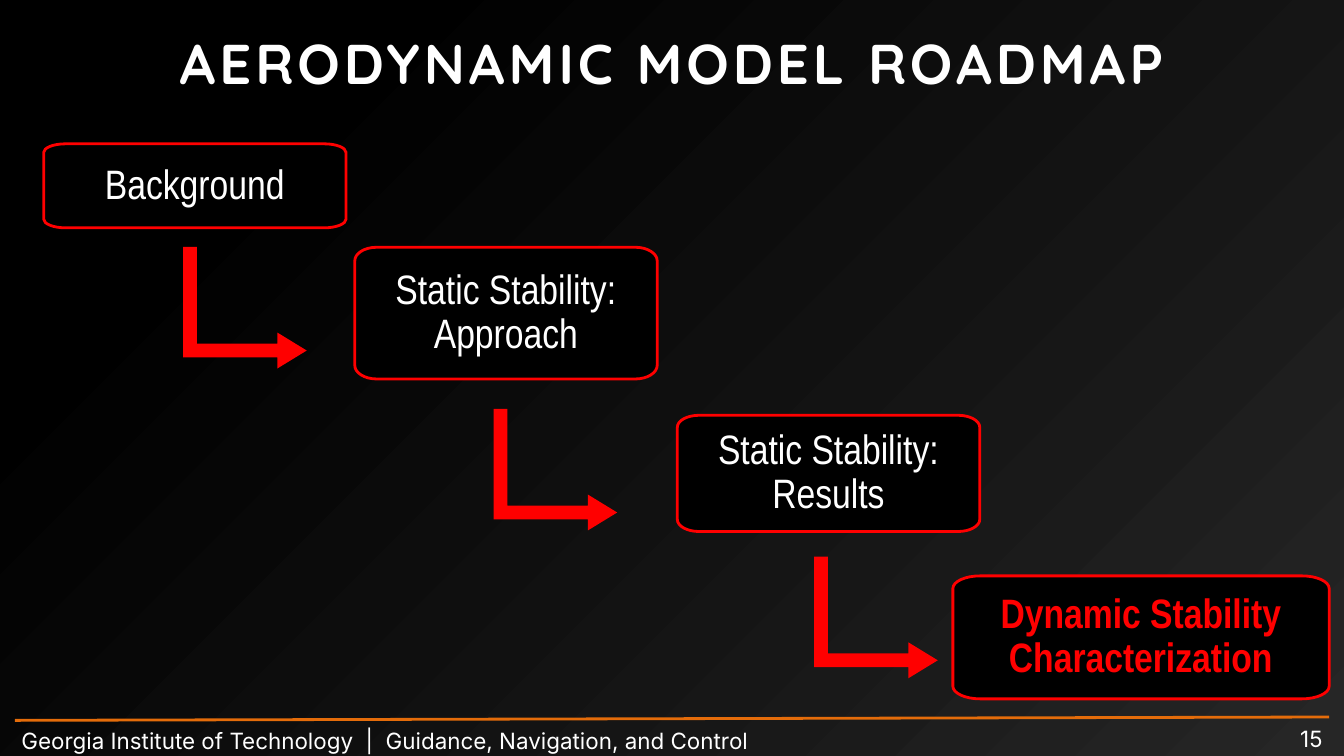
from dataclasses import dataclass

from lxml.etree import SubElement
from pptx import Presentation
from pptx.dml.color import RGBColor
from pptx.enum.shapes import MSO_CONNECTOR, MSO_SHAPE
from pptx.enum.text import MSO_ANCHOR, MSO_AUTO_SIZE, PP_ALIGN
from pptx.oxml.ns import qn
from pptx.util import Inches, Pt


@dataclass(frozen=True)
class Theme:
    black: RGBColor = RGBColor(0, 0, 0)
    gray: RGBColor = RGBColor(0x26, 0x26, 0x26)
    white: RGBColor = RGBColor(255, 255, 255)
    red: RGBColor = RGBColor(255, 0, 0)
    orange: RGBColor = RGBColor(0xE4, 0x6C, 0x0A)
    head: str = "Quicksand"
    body: str = "Arial Narrow"
    foot: str = "Inter"
    head_size: int = 60
    body_size: int = 44
    foot_size: int = 24


THEME = Theme()
STEPS = [
    ("Background", (0.65, 2.14, 4.5, 1.25)),
    ("Static Stability: Approach", (5.28, 3.68, 4.5, 1.96)),
    ("Static Stability: Results", (10.08, 6.18, 4.5, 1.73)),
    ("Dynamic Stability Characterization", (14.18, 8.57, 5.6, 1.83)),
]
ARROWS = [(2.75, 3.67), (7.37, 6.08), (12.14, 8.28)]


def write(shape, text, *, font, size, color=THEME.white, bold=False,
          align=PP_ALIGN.LEFT, anchor=MSO_ANCHOR.MIDDLE, leading=None,
          inset=None, track=None):
    frame = shape.text_frame
    frame.word_wrap = True
    frame.auto_size = MSO_AUTO_SIZE.NONE
    frame.vertical_anchor = anchor
    if inset is not None:
        frame.margin_left = frame.margin_right = Inches(inset)
        frame.margin_top = frame.margin_bottom = Inches(inset)
    para = frame.paragraphs[0]
    para.alignment = align
    para.line_spacing = leading
    run = para.add_run()
    run.text = text
    run.font.name = font
    run.font.size = Pt(size)
    run.font.bold = bold
    run.font.color.rgb = color
    if track is not None:
        run.font._element.set("spc", str(round(track * 100)))


def paint(shape, fill, line, width):
    shape.shadow.inherit = False
    shape.fill.solid()
    shape.fill.fore_color.rgb = fill
    shape.line.color.rgb = line
    shape.line.width = Pt(width)
    edge = shape._element.spPr.find(qn("a:ln"))
    SubElement(edge, qn("a:miter"), lim="800000")


def add_back(slide):
    """Lay the diagonal gradient behind everything else."""
    back = slide.shapes.add_shape(MSO_SHAPE.RECTANGLE, Inches(-0.04),
                                  Inches(-0.04), Inches(20.04), Inches(11.29))
    back.rotation = 180
    back.shadow.inherit = False
    back.line.fill.background()
    back.fill.gradient()
    back.fill.gradient_angle = 135
    shades = [(0.19, THEME.black), (1, THEME.gray)]
    for stop, (place, color) in zip(back.fill.gradient_stops, shades):
        stop.position = place
        stop.color.rgb = color
    slide.shapes._spTree.insert(2, back._element)


def add_title(slide, text):
    title = slide.shapes.title
    title.left, title.top = Inches(-0.02), Inches(0.72)
    title.width, title.height = Inches(20.04), Inches(0.79)
    write(title, text, font=THEME.head, size=THEME.head_size, bold=True,
          align=PP_ALIGN.CENTER, anchor=MSO_ANCHOR.TOP, leading=Pt(51.2),
          inset=0, track=4.3)


def add_note(slide, text, box, **style):
    note = slide.shapes.add_textbox(*map(Inches, box))
    write(note, text, font=THEME.foot, size=THEME.foot_size, **style)


def add_rule(slide, start, end):
    rule = slide.shapes.add_connector(MSO_CONNECTOR.STRAIGHT,
                                      *map(Inches, start + end))
    rule.line.color.rgb = THEME.orange
    rule.line.width = Pt(3)
    SubElement(rule._element.spPr, qn("a:effectLst"))


def add_arrow(slide, left, top):
    """Draw an arrow that runs down, then right."""
    arrow = slide.shapes.add_shape(MSO_SHAPE.BENT_UP_ARROW, Inches(left),
                                   Inches(top), Inches(1.78), Inches(1.81))
    for i, value in enumerate((0.103, 0.14, 0.229)):
        arrow.adjustments[i] = value
    arrow.rotation = 270
    for flip in ("flipH", "flipV"):
        arrow._element.spPr.xfrm.set(flip, "1")
    paint(arrow, THEME.red, THEME.red, 1.5)


def corner_ends(left, top, width, height):
    """List the ends of the four corner arcs, clockwise from the left edge."""
    rx, ry = 0.072 * width, 0.103 * height
    right, low = left + width, top + height
    ends = [(left, top + ry), (left + rx, top),
            (right - rx, top), (right, top + ry),
            (right, low - ry), (right - rx, low),
            (left + rx, low), (left, low - ry)]
    return [(Inches(x), Inches(y)) for x, y in ends]


def bend_corners(shape):
    """Turn every second straight side into a quarter ellipse."""
    sides = list(shape._element.iter(qn("a:moveTo"), qn("a:lnTo")))
    spots = [(int(side[0].get("x")), int(side[0].get("y"))) for side in sides]
    for i in range(1, len(sides), 2):
        (x0, y0), (x1, y1) = spots[i - 1], spots[i]
        x, y = (x0, y1) if i % 4 == 1 else (x1, y0)
        pulls = [(a + 0.55 * (x - a), b + 0.55 * (y - b))
                 for a, b in ((x0, y0), (x1, y1))]
        side = sides[i]
        side.tag = qn("a:cubicBezTo")
        end = side[0]
        for a, b in pulls:
            SubElement(side, qn("a:pt"), x=str(round(a)), y=str(round(b)))
        side.append(end)


def add_step(slide, text, box, active):
    first, *rest = corner_ends(*box)
    path = slide.shapes.build_freeform(*first)
    path.add_line_segments(rest + [first], close=True)
    step = path.convert_to_shape()
    bend_corners(step)
    paint(step, THEME.black, THEME.red, 3)
    write(step, text, font=THEME.body, size=THEME.body_size, bold=active,
          color=THEME.red if active else THEME.white,
          align=PP_ALIGN.CENTER, leading=0.9, inset=0.22)


def main():
    deck = Presentation()
    deck.slide_width, deck.slide_height = Inches(20), Inches(11.25)
    slide = deck.slides.add_slide(deck.slide_layouts[5])
    add_back(slide)
    add_title(slide, "AERODYNAMIC MODEL ROADMAP")
    add_note(slide, "Georgia Institute of Technology  |  "
             "Guidance, Navigation, and Control",
             (0.22, 10.68, 11.33, 0.57), leading=Pt(36.4))
    add_note(slide, "15", (17.45, 10.74, 2.33, 0.43),
             align=PP_ALIGN.RIGHT, leading=Pt(33.6))
    add_rule(slide, (0.22, 10.72), (19.78, 10.67))
    for spot in ARROWS:
        add_arrow(slide, *spot)
    for text, box in STEPS:
        add_step(slide, text, box, active=text.startswith("Dynamic"))
    deck.save("out.pptx")


if __name__ == "__main__":
    main()
